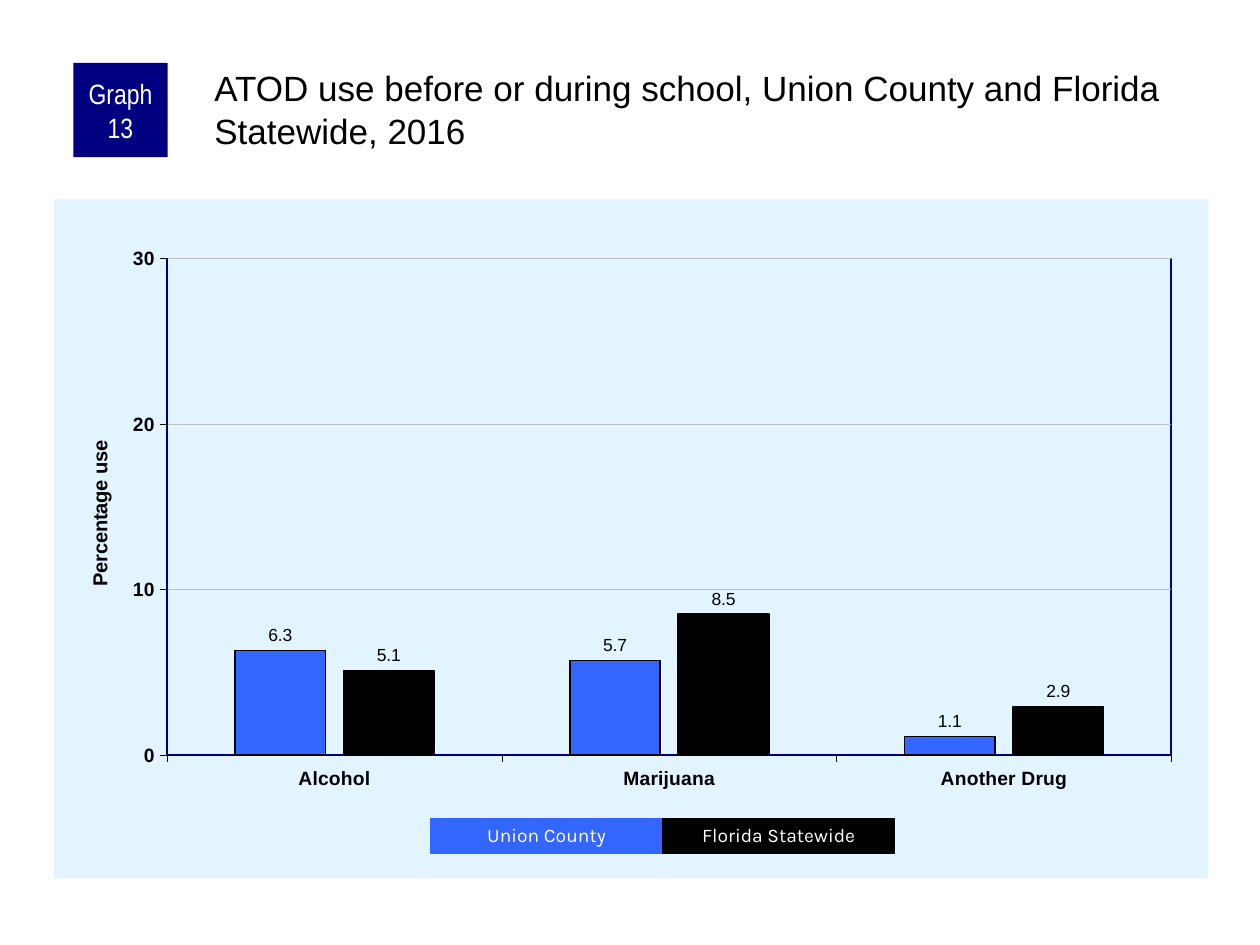
import pptx
import pptx.chart.data
import pptx.dml.color
import pptx.enum.chart
import pptx.enum.shapes
import pptx.enum.text
import pptx.oxml
import pptx.oxml.ns
import pptx.util
from pptx.util import Cm

TITLE = "ATOD use before or during school, Union County and Florida Statewide, 2016"
BADGE = "Graph 13"
AXIS_TITLE = "Percentage use"
CATEGORIES = ["Alcohol", "Marijuana", "Another Drug"]
SERIES = [
    ("Union County", "3366FF", [6.3, 5.7, 1.1]),
    ("Florida Statewide", "000000", [5.1, 8.5, 2.9]),
]
BLACK, WHITE, NAVY, PALE, GREY = "000000", "FFFFFF", "000080", "E1F4FF", "C0C0C0"
KEY_LEFT, KEY_TOP, KEY_WIDTH, KEY_HEIGHT = 8.68, 16.51, 4.68, 0.69

Align = pptx.enum.text.PP_ALIGN
Anchor = pptx.enum.text.MSO_ANCHOR
Fit = pptx.enum.text.MSO_AUTO_SIZE


def color(value):
    return pptx.dml.color.RGBColor.from_string(value)


def set_font(font, size, ink=BLACK, bold=False, name="Arial"):
    font.size, font.bold, font.name = pptx.util.Pt(size), bold, name
    font.color.rgb = color(ink)


def set_line(line, ink, width):
    line.color.rgb = color(ink)
    line.width = pptx.util.Pt(width)


def write(shape, text, size, ink=BLACK, name="Arial", align=Align.CENTER,
          anchor=Anchor.MIDDLE, insets=(0.25, 0.13, 0.25, 0.13),
          spacing=None, fit=Fit.NONE):
    """Fill a shape with one paragraph; insets are left, top, right, bottom in cm."""
    frame = shape.text_frame
    frame.word_wrap, frame.auto_size, frame.vertical_anchor = True, fit, anchor
    (frame.margin_left, frame.margin_top,
     frame.margin_right, frame.margin_bottom) = map(Cm, insets)
    para = frame.paragraphs[0]
    para.alignment, para.line_spacing = align, spacing
    span = para.add_run()
    span.text = text
    set_font(span.font, size, ink, name=name)


def add_box(slide, left, top, width, height, fill, outlined=False):
    box = slide.shapes.add_shape(pptx.enum.shapes.MSO_SHAPE.RECTANGLE,
                                 Cm(left), Cm(top), Cm(width), Cm(height))
    box.shadow.inherit = False
    box.fill.solid()
    box.fill.fore_color.rgb = color(fill)
    if outlined:
        set_line(box.line, fill, 0.75)
    else:
        box.line.fill.background()
    return box


def chart_xml(tag, content):
    spaces = pptx.oxml.ns.nsdecls("c", "a")
    return pptx.oxml.parse_xml(f"<c:{tag} {spaces}>{content}</c:{tag}>")


def layout_xml(**settings):
    parts = "".join(f'<c:{tag} val="{value}"/>' for tag, value in settings.items())
    return chart_xml("layout", f"<c:manualLayout>{parts}</c:manualLayout>")


def style_chart_areas(chart):
    """Set the background, plot frame, and manual places of plot and axis title."""
    space = chart._chartSpace
    for old in space.xpath("c:chart/c:plotArea/c:layout | .//c:valAx/c:title/c:layout"):
        old.getparent().remove(old)
    plot_area = space.xpath("c:chart/c:plotArea")[0]
    plot_area.insert(0, layout_xml(layoutTarget="inner", xMode="edge", yMode="edge",
                                   x=0.098, y=0.087, w=0.87, h=0.731))
    plot_area.append(chart_xml("spPr", '<a:noFill/><a:ln w="12700"><a:solidFill>'
                               f'<a:srgbClr val="{NAVY}"/></a:solidFill></a:ln>'))
    space.xpath("c:chart")[0].addnext(chart_xml(
        "spPr", f'<a:solidFill><a:srgbClr val="{PALE}"/></a:solidFill>'
        "<a:ln><a:noFill/></a:ln>"))
    title = space.xpath(".//c:valAx/c:title")[0]
    title.xpath("c:tx")[0].addnext(
        layout_xml(xMode="edge", yMode="edge", x=0.025, y=0.35))
    body = title.xpath("c:tx/c:rich/a:bodyPr")[0]
    body.set("rot", "-5400000")
    body.set("vert", "horz")


def add_use_chart(slide):
    data = pptx.chart.data.CategoryChartData(number_format="0.0")
    data.categories = CATEGORIES
    for name, _, values in SERIES:
        data.add_series(name, values)
    chart = slide.shapes.add_chart(
        pptx.enum.chart.XL_CHART_TYPE.COLUMN_CLUSTERED,
        Cm(1.09), Cm(4.02), Cm(23.27), Cm(13.69), data).chart
    chart.has_title = chart.has_legend = False
    set_font(chart.font, 11.5)

    for axis in (chart.category_axis, chart.value_axis):
        axis.major_tick_mark = pptx.enum.chart.XL_TICK_MARK.OUTSIDE
        axis.minor_tick_mark = pptx.enum.chart.XL_TICK_MARK.NONE
        set_font(axis.tick_labels.font, 11, bold=True)
        set_line(axis.format.line, BLACK, 0.25)
    scale = chart.value_axis
    scale.minimum_scale, scale.maximum_scale, scale.major_unit = 0, 30, 10
    scale.tick_labels.number_format = "0"
    scale.tick_labels.number_format_is_linked = False
    scale.has_major_gridlines = True
    set_line(scale.major_gridlines.format.line, GREY, 0.25)
    span = scale.axis_title.text_frame.paragraphs[0].add_run()
    span.text = AXIS_TITLE
    set_font(span.font, 11.5, bold=True)

    plot = chart.plots[0]
    plot.gap_width, plot.overlap, plot.vary_by_categories = 150, -20, False
    for series, (_, fill, _) in zip(plot.series, SERIES):
        series.format.fill.solid()
        series.format.fill.fore_color.rgb = color(fill)
        set_line(series.format.line, BLACK, 1)
        labels = series.data_labels
        labels.show_value = True
        labels.number_format, labels.number_format_is_linked = "0.0", False
        labels.position = pptx.enum.chart.XL_LABEL_POSITION.OUTSIDE_END
        set_font(labels.font, 10)
    style_chart_areas(chart)


def main():
    deck = pptx.Presentation()
    deck.slide_width, deck.slide_height = Cm(25.4), Cm(19.05)
    slide = deck.slides.add_slide(deck.slide_layouts.get_by_name("Title Only"))

    title = slide.shapes.title
    title.left, title.top, title.width, title.height = map(Cm, (4.24, 1.27, 20.12, 2.11))
    write(title, TITLE, 20, align=Align.LEFT, anchor=Anchor.TOP,
          insets=(0.08, 0.08, 0, 0))

    add_use_chart(slide)
    badge = add_box(slide, 1.48, 1.27, 1.9, 1.9, NAVY)
    write(badge, BADGE, 16, WHITE, "Arial Narrow", insets=(0.13, 0, 0.13, 0))

    for index, (name, fill, _) in enumerate(SERIES):
        key = add_box(slide, KEY_LEFT + index * KEY_WIDTH, KEY_TOP,
                      KEY_WIDTH, KEY_HEIGHT, fill, outlined=True)
        write(key, name, 11, WHITE, "Karla", anchor=Anchor.TOP, spacing=0.9,
              fit=Fit.SHAPE_TO_FIT_TEXT)

    deck.save("out.pptx")


if __name__ == "__main__":
    main()
